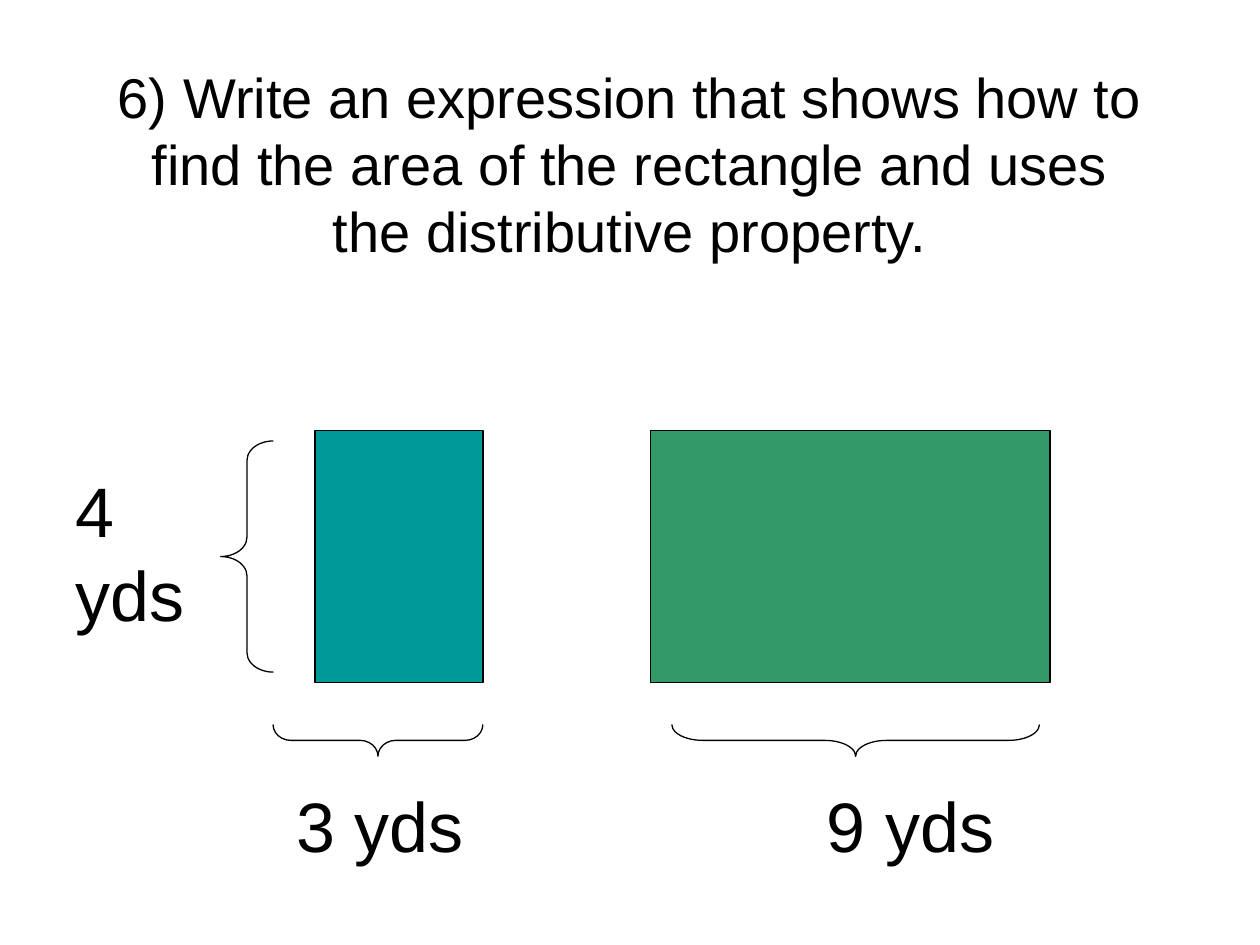
from dataclasses import dataclass

from pptx import Presentation
from pptx import util as u
from pptx.dml.color import RGBColor
from pptx.enum import shapes, text
from pptx.shapes.autoshape import Shape
from pptx.slide import Slide

BLACK = RGBColor(0x00, 0x00, 0x00)
TEAL = RGBColor(0x00, 0x99, 0x99)
GREEN = RGBColor(0x33, 0x99, 0x66)
FONT = "Arial"
LABEL_STYLE = {"size": 40, "before": 4}


@dataclass(frozen=True)
class Frame:
    left: float
    top: float
    width: float
    height: float

    def lengths(self) -> tuple[u.Length, ...]:
        return tuple(u.Cm(value) for value in (self.left, self.top, self.width, self.height))


@dataclass(frozen=True)
class Rectangle:
    frame: Frame
    color: RGBColor


@dataclass(frozen=True)
class Brace:
    frame: Frame
    curve: float
    rotation: float = 0


@dataclass(frozen=True)
class Label:
    words: str
    frame: Frame
    indent: float = 0


RECTANGLES = (
    Rectangle(Frame(6.35, 8.68, 3.39, 5.08), TEAL),
    Rectangle(Frame(13.12, 8.68, 8.05, 5.08), GREEN),
)
LABELS = (
    Label("4 yds", Frame(1.27, 9.31, 3.18, 3.63)),
    Label("3 yds", Frame(5.72, 15.66, 4.23, 1.96)),
    Label("9 yds", Frame(15.24, 15.66, 7.83, 1.96), indent=1.18),
)
BRACES = (
    Brace(Frame(4.45, 8.89, 1.06, 4.66), 0.37),
    Brace(Frame(16.93, 11.22, 0.64, 7.41), 0.97, 270),
    Brace(Frame(7.3, 12.81, 0.64, 4.23), 0.56, 270),
)


def add_text(slide: Slide, words: str, frame: Frame, *, size: float, before: float = 0,
             indent: float = 0, align=text.PP_ALIGN.LEFT, anchor=text.MSO_ANCHOR.TOP) -> None:
    box = slide.shapes.add_textbox(*frame.lengths()).text_frame
    box.word_wrap = True
    box.vertical_anchor = anchor
    box.margin_left = u.Cm(0.25 + indent)
    para = box.paragraphs[0]
    para.alignment = align
    para.space_before = u.Pt(before)
    span = para.add_run()
    span.text = words
    span.font.name = FONT
    span.font.size = u.Pt(size)
    span.font.color.rgb = BLACK


def add_outlined(slide: Slide, kind: shapes.MSO_SHAPE, frame: Frame) -> Shape:
    shape = slide.shapes.add_shape(kind, *frame.lengths())
    shape.shadow.inherit = False
    shape.line.color.rgb = BLACK
    shape.line.width = u.Pt(0.75)
    return shape


def add_rectangle(slide: Slide, rectangle: Rectangle) -> None:
    shape = add_outlined(slide, shapes.MSO_SHAPE.RECTANGLE, rectangle.frame)
    shape.fill.solid()
    shape.fill.fore_color.rgb = rectangle.color


def add_brace(slide: Slide, brace: Brace) -> None:
    shape = add_outlined(slide, shapes.MSO_SHAPE.LEFT_BRACE, brace.frame)
    shape.fill.background()
    shape.rotation = brace.rotation
    shape.adjustments[0] = brace.curve
    shape.adjustments[1] = 0.5


def main() -> None:
    """Build the area-model question slide and save it."""
    deck = Presentation()
    deck.slide_width, deck.slide_height = u.Cm(25.4), u.Cm(19.05)
    page = deck.slides.add_slide(deck.slide_layouts[6])
    add_text(
        page,
        "6) Write an expression that shows how to find the area of the rectangle "
        "and uses the distributive property.",
        Frame(1.9, 1.7, 21.6, 3.18),
        size=32,
        align=text.PP_ALIGN.CENTER,
        anchor=text.MSO_ANCHOR.MIDDLE,
    )
    for rectangle in RECTANGLES:
        add_rectangle(page, rectangle)
    for label in LABELS:
        add_text(page, label.words, label.frame, indent=label.indent, **LABEL_STYLE)
    for brace in BRACES:
        add_brace(page, brace)
    deck.save("out.pptx")


if __name__ == "__main__":
    main()
